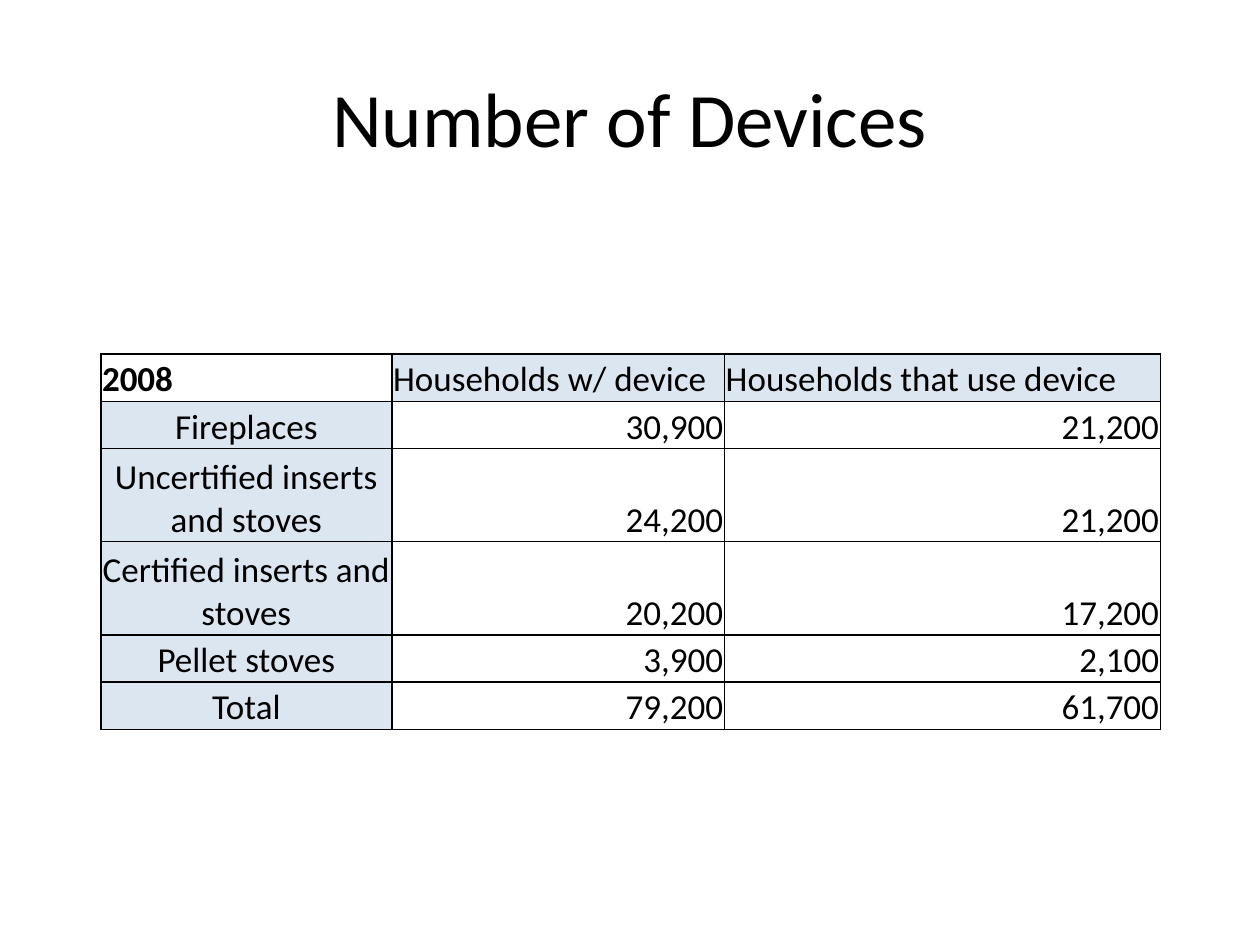
from lxml.etree import SubElement
from pptx import Presentation
from pptx.dml.color import RGBColor
from pptx.enum.text import MSO_ANCHOR as Anchor, PP_ALIGN as Align
from pptx.oxml.ns import qn
from pptx.util import Inches, Pt

COLORS = {"text": "000000", "border": "000000", "label": "DCE6F1"}
FONT = "Calibri"

HOUSEHOLDS = [
    ("2008", "Households w/ device", "Households that use device"),
    ("Fireplaces", "30,900", "21,200"),
    ("Uncertified inserts and stoves", "24,200", "21,200"),
    ("Certified inserts and stoves", "20,200", "17,200"),
    ("Pellet stoves", "3,900", "2,100"),
    ("Total", "79,200", "61,700"),
]
COLUMN_WIDTHS = [2.31, 2.64, 3.46]
TABLE_HEIGHT = 2.98
TWO_LINE_ROWS = (2, 3)
TWO_LINE_HEIGHT = 0.74
ONE_LINE_HEIGHT = (TABLE_HEIGHT - len(TWO_LINE_ROWS) * TWO_LINE_HEIGHT) / (
    len(HOUSEHOLDS) - len(TWO_LINE_ROWS))


def write(frame, text, align, size, bold=False):
    frame.word_wrap = True
    paragraph = frame.paragraphs[0]
    paragraph.alignment = align
    run = paragraph.add_run()
    run.text = text
    for name, value in {"name": FONT, "size": Pt(size), "bold": bold}.items():
        setattr(run.font, name, value)
    run.font.color.rgb = RGBColor.from_string(COLORS["text"])


def add_title(slide, text):
    title = slide.shapes.add_textbox(Inches(0.5), Inches(0.3), Inches(9), Inches(1.25))
    title.text_frame.vertical_anchor = Anchor.MIDDLE
    write(title.text_frame, text, Align.CENTER, 44)


def add_borders(cell):
    properties = cell._tc.get_or_add_tcPr()
    for side in ("a:lnL", "a:lnR", "a:lnT", "a:lnB"):
        line = SubElement(properties, qn(side), w=str(Pt(1)))
        fill = SubElement(line, qn("a:solidFill"))
        SubElement(fill, qn("a:srgbClr"), val=COLORS["border"])


def format_cell(cell, text, row, column):
    layout = {
        "vertical_anchor": Anchor.BOTTOM,
        "margin_left": Inches(0.01),
        "margin_right": Inches(0.01),
        "margin_top": Inches(0.01),
        "margin_bottom": 0,
    }
    for name, value in layout.items():
        setattr(cell, name, value)
    add_borders(cell)

    # Exactly one of row and column is zero in a label cell
    is_year = row == 0 and column == 0
    if (row == 0) != (column == 0):
        cell.fill.solid()
        cell.fill.fore_color.rgb = RGBColor.from_string(COLORS["label"])
    else:
        cell.fill.background()

    if row == 0:
        align = Align.LEFT
    else:
        align = Align.CENTER if column == 0 else Align.RIGHT
    write(cell.text_frame, text, align, 20, bold=is_year)


def add_device_table(slide):
    devices = slide.shapes.add_table(
        len(HOUSEHOLDS), len(COLUMN_WIDTHS), Inches(0.8), Inches(2.81),
        Inches(sum(COLUMN_WIDTHS)), Inches(TABLE_HEIGHT)).table
    devices.first_row = devices.horz_banding = False
    for column, width in zip(devices.columns, COLUMN_WIDTHS):
        column.width = Inches(width)
    for row, texts in enumerate(HOUSEHOLDS):
        height = TWO_LINE_HEIGHT if row in TWO_LINE_ROWS else ONE_LINE_HEIGHT
        devices.rows[row].height = Inches(height)
        for column, text in enumerate(texts):
            format_cell(devices.cell(row, column), text, row, column)


def main():
    deck = Presentation()
    deck.slide_width, deck.slide_height = Inches(10), Inches(7.5)
    slide = deck.slides.add_slide(deck.slide_layouts[6])
    add_title(slide, "Number of Devices")
    add_device_table(slide)
    deck.save("out.pptx")


if __name__ == "__main__":
    main()
